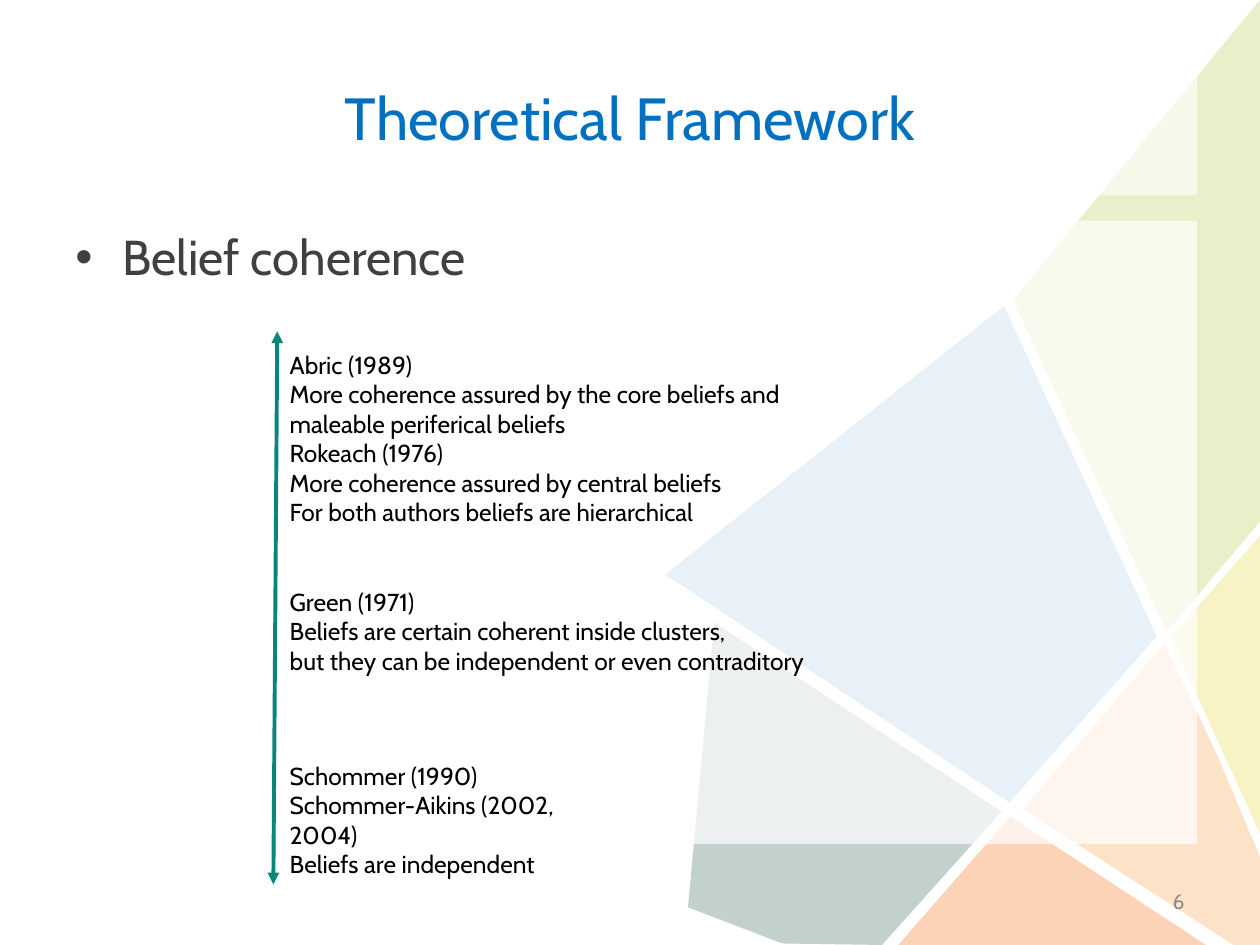
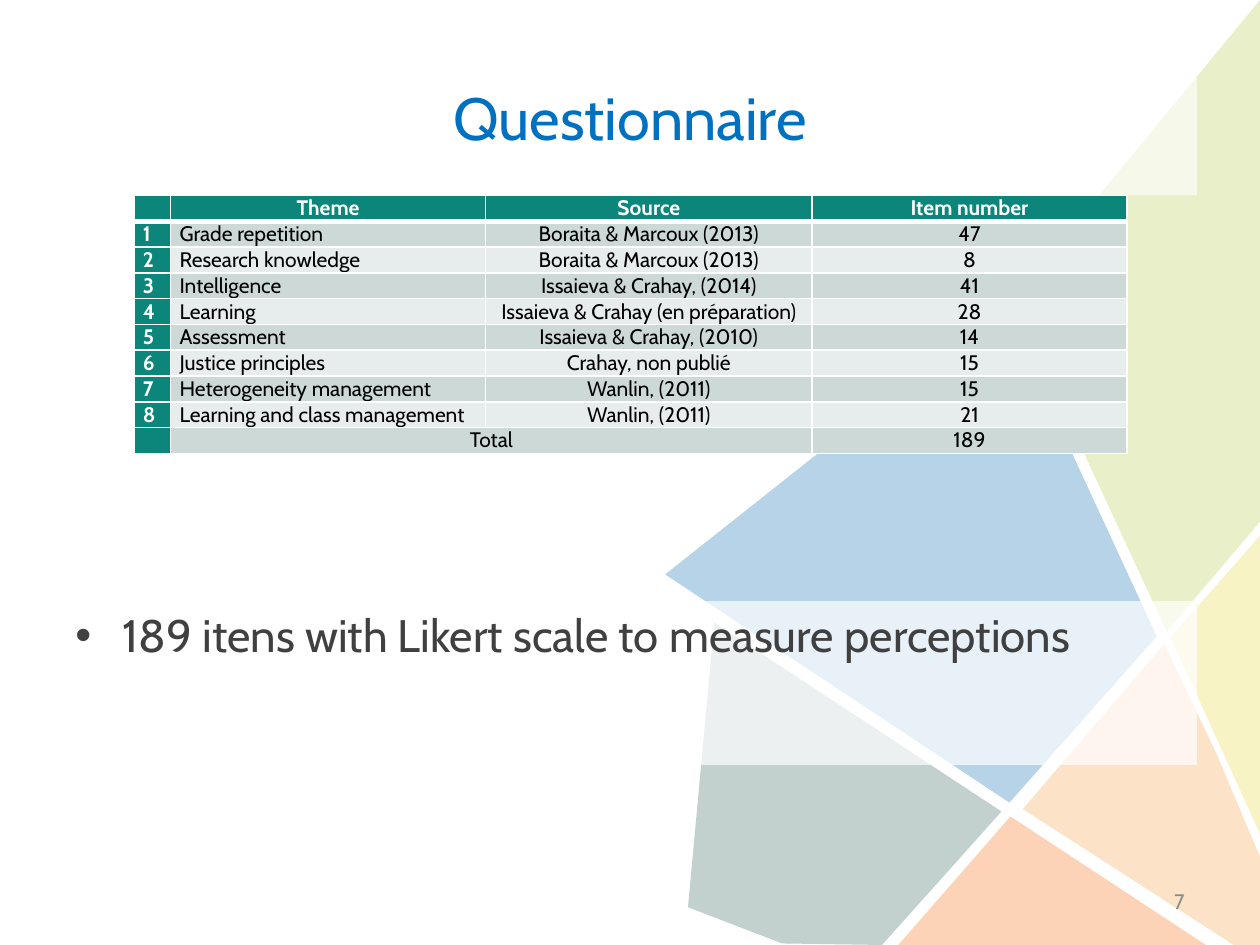
from lxml import etree
from pptx import Presentation
from pptx.dml.color import RGBColor
from pptx.enum.shapes import MSO_CONNECTOR, MSO_SHAPE
from pptx.enum.text import MSO_ANCHOR, PP_ALIGN
from pptx.oxml.ns import qn
from pptx.util import Cm, Pt

LEFT, CENTER, RIGHT, JUSTIFY = PP_ALIGN.LEFT, PP_ALIGN.CENTER, PP_ALIGN.RIGHT, PP_ALIGN.JUSTIFY
TOP, MIDDLE = MSO_ANCHOR.TOP, MSO_ANCHOR.MIDDLE
RECTANGLE, STRAIGHT = MSO_SHAPE.RECTANGLE, MSO_CONNECTOR.STRAIGHT

# Shared look
FONT = "Cabin"
WHITE, BLACK = "FFFFFF", "000000"
TITLE_BLUE, BODY_GREY, NUMBER_GREY = "0070C0", "404040", "8C8C8C"
ARROW_GREEN, TABLE_GREEN = "09867A", "0C867A"
ROW_FILLS = ("CCD9D7", "E7EDEC")
BAND_LEFT, BAND_WIDTH = 1.27, 22.86

# Background mosaic: fill and corners in cm
MOSAIC = [
    ("F7F3C5", [(25.4, 16.81), (25.4, 10.8), (23.6, 12.85)]),
    ("FCE3C7", [(24.87, 19.05), (25.4, 19.05), (25.4, 17.27), (24.53, 15.21),
                (23.47, 12.98), (20.62, 16.31)]),
    ("FCD3B6", [(24.31, 19.05), (20.37, 16.46), (18.11, 19.05)]),
    ("C2D0CE", [(20.19, 16.36), (14.4, 12.55), (13.87, 18.29), (15.77, 19.02),
                (17.78, 19.05)]),
    ("B7D3E8", [(23.32, 12.83), (20.24, 6.17), (13.41, 11.58), (20.35, 16.18)]),
    ("E9EFC9", [(25.4, 10.52), (25.4, 0), (20.42, 6.05), (23.52, 12.73)]),
]

# Top, width and lines of each group of authors
AUTHOR_NOTES = [
    (15.21, 7.2, ["Schommer (1990)", "Schommer-Aikins (2002, 2004)",
                  "Beliefs are independent"]),
    (11.71, 11.71, ["Green (1971)", "Beliefs are certain coherent inside clusters,",
                    "but they can be independent or even contraditory"]),
    (6.93, 11.35, ["Abric (1989)", "More coherence assured by the core beliefs and",
                   "maleable periferical beliefs", "Rokeach (1976)",
                   "More coherence assured by central beliefs",
                   "For both authors beliefs are hierarchical"]),
]

COLUMN_WIDTHS = (0.74, 6.35, 6.58, 6.35)
ROW_HEIGHT = 0.52
HEADINGS = ("", "Theme", "Source", "Item number")
THEMES = [
    ("Grade repetition", "Boraita & Marcoux (2013)", 47),
    ("Research knowledge", "Boraita & Marcoux (2013)", 8),
    ("Intelligence", "Issaieva & Crahay, (2014)", 41),
    ("Learning", "Issaieva & Crahay (en préparation)", 28),
    ("Assessment", "Issaieva & Crahay, (2010)", 14),
    ("Justice principles", "Crahay, non publié", 15),
    ("Heterogeneity management", "Wanlin, (2011)", 15),
    ("Learning and class management", "Wanlin, (2011)", 21),
]


def color(value):
    return RGBColor.from_string(value)


def add_element(parent, tag, **attributes):
    return etree.SubElement(parent, qn(tag), {k: str(v) for k, v in attributes.items()})


def paint(shape, fill, opacity=100):
    shape.shadow.inherit = False
    shape.line.fill.background()
    shape.fill.solid()
    shape.fill.fore_color.rgb = color(fill)
    if opacity < 100:
        solid = shape._element.spPr.find(qn("a:solidFill"))
        add_element(solid[0], "a:alpha", val=opacity * 1000)


def write(frame, lines, size, ink, align=LEFT, anchor=TOP, bold=False):
    frame.word_wrap = True
    frame.vertical_anchor = anchor
    frame.text = "\n".join(lines)
    for para in frame.paragraphs:
        para.alignment = align
        for span in para.runs:
            span.font.name = FONT
            span.font.size = Pt(size)
            span.font.bold = bold
            span.font.color.rgb = color(ink)


def add_text(page, left, top, width, height, lines, size, ink, **layout):
    box = page.shapes.add_textbox(Cm(left), Cm(top), Cm(width), Cm(height))
    write(box.text_frame, lines, size, ink, **layout)


def add_band(page, top, height, opacity, text, size, ink, **layout):
    band = page.shapes.add_shape(RECTANGLE, Cm(BAND_LEFT), Cm(top), Cm(BAND_WIDTH), Cm(height))
    paint(band, WHITE, opacity)
    write(band.text_frame, [text], size, ink, **layout)
    return band


def add_title(page, text):
    add_band(page, 0.76, 3.18, 60, text, 34, TITLE_BLUE, align=CENTER, anchor=MIDDLE)


def add_bullet_band(page, top, height, text, size):
    band = add_band(page, top, height, 70, text, size, BODY_GREY)
    properties = band.text_frame.paragraphs[0]._p.get_or_add_pPr()
    properties.set("marL", str(Cm(0.95)))
    properties.set("indent", str(Cm(-0.95)))
    add_element(properties, "a:buFont", typeface="Arial")
    add_element(properties, "a:buChar", char="•")


def add_double_arrow(page, start, end):
    arrow = page.shapes.add_connector(STRAIGHT, *map(Cm, start + end))
    arrow.line.color.rgb = color(ARROW_GREEN)
    arrow.line.width = Pt(2.25)
    line = arrow.line._get_or_add_ln()
    for tag in ("a:headEnd", "a:tailEnd"):
        add_element(line, tag, type="triangle")
    add_element(arrow._element.spPr, "a:effectLst")


def add_page(deck, number):
    page = deck.slides.add_slide(deck.slide_layouts[6])
    for fill, corners in MOSAIC:
        points = [(round(x * 100), round(y * 100)) for x, y in corners]
        builder = page.shapes.build_freeform(*points[0], scale=Cm(0.01))
        builder.add_line_segments(points[1:], close=True)
        paint(builder.convert_to_shape(), fill)
    add_text(page, 18.21, 17.65, 5.92, 1.02, [str(number)], 12, NUMBER_GREY,
             align=RIGHT, anchor=MIDDLE)
    return page


def format_cell(cell, text, fill, ink, align, bold, bottom_line):
    cell.margin_left = cell.margin_right = Cm(0.18)
    cell.margin_top = cell.margin_bottom = 0
    write(cell.text_frame, [text], 12, ink, align=align, bold=bold)
    if not text:  # keeps an empty cell as low as the others
        add_element(cell.text_frame.paragraphs[0]._p, "a:endParaRPr", sz=1200)
    properties = cell._tc.get_or_add_tcPr()
    for side, width in (("L", 1), ("R", 1), ("T", 1), ("B", bottom_line)):
        border = add_element(properties, "a:ln" + side, w=Pt(width))
        add_element(add_element(border, "a:solidFill"), "a:srgbClr", val=WHITE)
    cell.fill.solid()
    cell.fill.fore_color.rgb = color(fill)


def add_theme_table(page, left, top):
    rows = [HEADINGS]
    rows += [(number, *theme) for number, theme in enumerate(THEMES, 1)]
    rows.append(("", "Total", "", sum(items for _, _, items in THEMES)))
    frame = page.shapes.add_table(len(rows), len(HEADINGS), Cm(left), Cm(top),
                                  Cm(sum(COLUMN_WIDTHS)), Cm(ROW_HEIGHT * len(rows)))
    table = frame.table
    table.first_row = table.horz_banding = False
    for column, width in zip(table.columns, COLUMN_WIDTHS):
        column.width = Cm(width)
    last = len(rows) - 1
    table.cell(last, 1).merge(table.cell(last, 2))
    for r, values in enumerate(rows):
        table.rows[r].height = Cm(ROW_HEIGHT)
        for c, value in enumerate(values):
            heading = r == 0 or c == 0
            centered = r in (0, last) or c > 1
            format_cell(table.cell(r, c), str(value),
                        fill=TABLE_GREEN if heading else ROW_FILLS[(r - 1) % 2],
                        ink=WHITE if heading else BLACK,
                        align=CENTER if centered else JUSTIFY,
                        bold=heading, bottom_line=3 if r == 0 else 1)


def add_framework_page(deck):
    page = add_page(deck, 6)
    add_bullet_band(page, 4.45, 12.57, "Belief coherence", 28)
    add_title(page, "Theoretical Framework")
    add_double_arrow(page, (5.59, 6.68), (5.51, 17.83))
    for top, width, lines in AUTHOR_NOTES:
        add_text(page, 5.59, top, width, 0.25 + 0.6 * len(lines), lines, 14, BLACK)


def add_questionnaire_page(deck):
    page = add_page(deck, 7)
    add_theme_table(page, 2.7, 3.94)
    add_title(page, "Questionnaire")
    add_bullet_band(page, 12.12, 3.3,
                    "189 itens with Likert scale to measure perceptions", 26)


def main():
    deck = Presentation()
    deck.slide_width, deck.slide_height = Cm(25.4), Cm(19.05)
    add_framework_page(deck)
    add_questionnaire_page(deck)
    deck.save("out.pptx")


if __name__ == "__main__":
    main()
